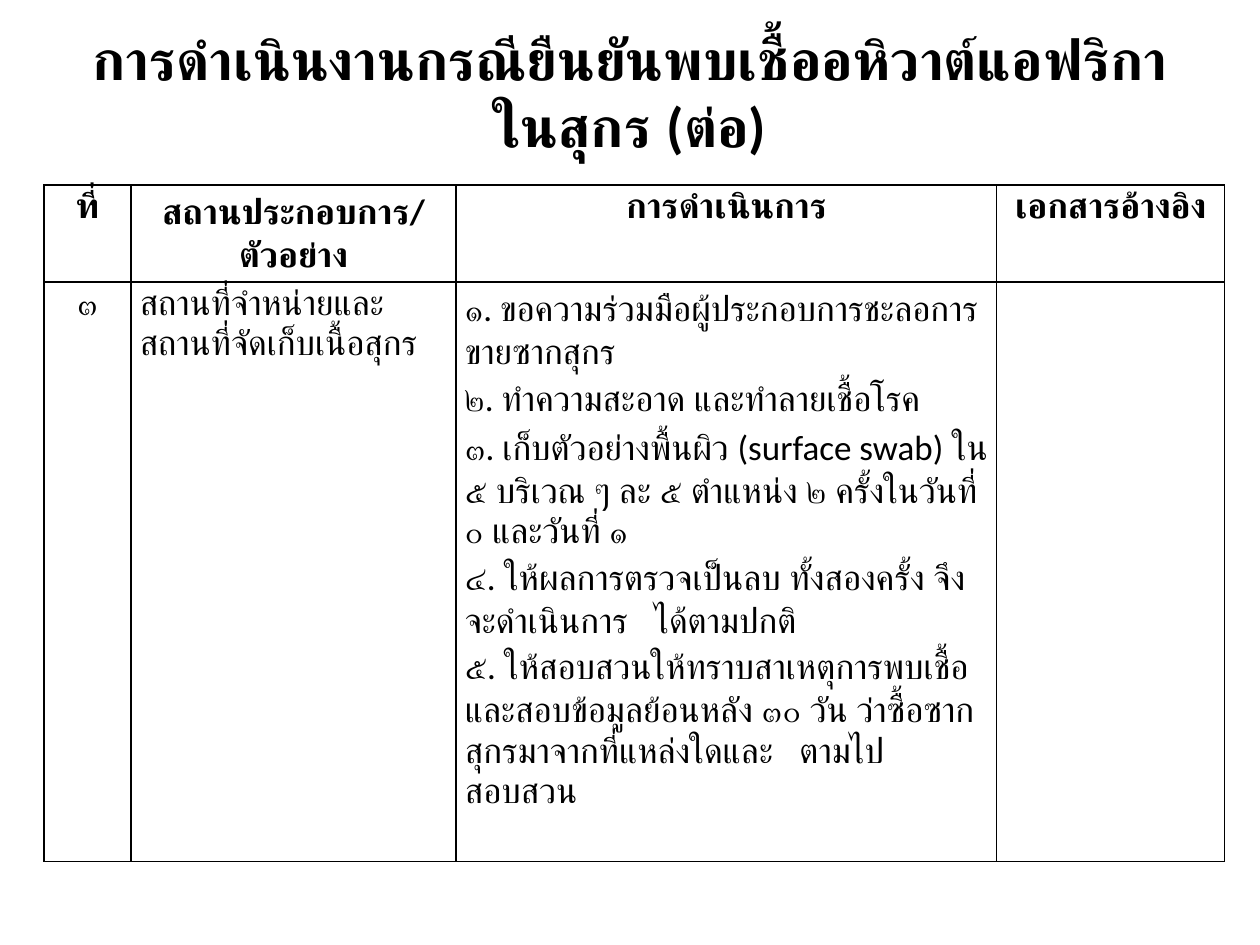
"""Build a slide with a titled table of steps after African swine fever is confirmed."""
import pptx
import pptx.dml.color
import pptx.enum.lang
import pptx.enum.text
import pptx.oxml
import pptx.oxml.ns
import pptx.util

Pt = pptx.util.Pt
Align = pptx.enum.text.PP_ALIGN
Anchor = pptx.enum.text.MSO_ANCHOR

BLACK = pptx.dml.color.RGBColor(0x00, 0x00, 0x00)
FONT = "Calibri"

TITLE = "การดำเนินงานกรณียืนยันพบเชื้ออหิวาต์แอฟริกาในสุกร (ต่อ)"
HEADINGS = ["ที่", "สถานประกอบการ/ตัวอย่าง", "การดำเนินการ", "เอกสารอ้างอิง"]
STEPS = [
    "๑. ขอความร่วมมือผู้ประกอบการชะลอการขายซากสุกร",
    "๒. ทำความสะอาด และทำลายเชื้อโรค",
    "๓. เก็บตัวอย่างพื้นผิว (surface swab) ใน ๕ บริเวณ ๆ ละ ๕ ตำแหน่ง ๒ ครั้งในวันที่ ๐ และวันที่ ๑",
    "๔. ให้ผลการตรวจเป็นลบ ทั้งสองครั้ง จึงจะดำเนินการ   ได้ตามปกติ",
    "๕. ให้สอบสวนให้ทราบสาเหตุการพบเชื้อและสอบข้อมูลย้อนหลัง ๓๐ วัน "
    "ว่าซื้อซากสุกรมาจากที่แหล่งใดและ   ตามไปสอบสวน",
]
PREMISES = "สถานที่จำหน่ายและสถานที่จัดเก็บเนื้อสุกร"
COLUMN_WIDTHS = [49.7, 185.8, 308.9, 130.3]
ROW_HEIGHTS = [34.6, 311]


def write_text(frame, lines, size=20, bold=False, align=Align.LEFT, spacing=None):
    """Write each line as a paragraph in one format."""
    frame.word_wrap = True
    for index, line in enumerate(lines):
        para = frame.add_paragraph() if index else frame.paragraphs[0]
        para.alignment = align
        para.line_spacing = spacing
        span = para.add_run()
        span.text = line
        span.font.name = FONT
        span.font.size = Pt(size)
        span.font.bold = bold
        span.font.color.rgb = BLACK
        span.font.language_id = pptx.enum.lang.MSO_LANGUAGE_ID.THAI


def add_title(page):
    """Add the centred heading."""
    box = page.shapes.add_textbox(Pt(36), Pt(21.6), Pt(648), Pt(61.2))
    box.text_frame.vertical_anchor = Anchor.MIDDLE
    write_text(box.text_frame, [TITLE], size=32, bold=True, align=Align.CENTER)


def draw_borders(cell, width=1):
    """Draw a solid line on all four sides of a cell."""
    properties = cell._tc.get_or_add_tcPr()
    for position, side in enumerate(("lnL", "lnR", "lnT", "lnB")):
        line = pptx.oxml.parse_xml(
            f'<a:{side} {pptx.oxml.ns.nsdecls("a")} w="{Pt(width)}">'
            f'<a:solidFill><a:srgbClr val="{BLACK}"/></a:solidFill></a:{side}>'
        )
        properties.insert(position, line)


def format_cell(cell):
    """Set the insets, fill and borders of a cell."""
    cell.margin_left = cell.margin_right = Pt(5)
    cell.margin_top = cell.margin_bottom = Pt(0)
    cell.fill.background()
    draw_borders(cell)


def add_steps_table(page):
    """Add the table of premises and steps."""
    table = page.shapes.add_table(
        len(ROW_HEIGHTS), len(COLUMN_WIDTHS), Pt(25.2), Pt(105.8),
        Pt(sum(COLUMN_WIDTHS)), Pt(sum(ROW_HEIGHTS)),
    ).table
    table.first_row = table.horz_banding = False
    for column, width in zip(table.columns, COLUMN_WIDTHS):
        column.width = Pt(width)
    for row, height in zip(table.rows, ROW_HEIGHTS):
        row.height = Pt(height)
    for cell in table.iter_cells():
        format_cell(cell)
    for index, heading in enumerate(HEADINGS):
        write_text(table.cell(0, index).text_frame, [heading], bold=True,
                   align=Align.CENTER, spacing=1.15)
    write_text(table.cell(1, 0).text_frame, ["๓"], align=Align.CENTER, spacing=1.15)
    write_text(table.cell(1, 1).text_frame, [PREMISES], spacing=1.15)
    write_text(table.cell(1, 2).text_frame, STEPS, spacing=1.15)


def main():
    """Create and save the deck."""
    deck = pptx.Presentation()
    deck.slide_width, deck.slide_height = Pt(720), Pt(540)
    page = deck.slides.add_slide(deck.slide_layouts[6])
    add_title(page)
    add_steps_table(page)
    deck.save("out.pptx")


if __name__ == "__main__":
    main()
